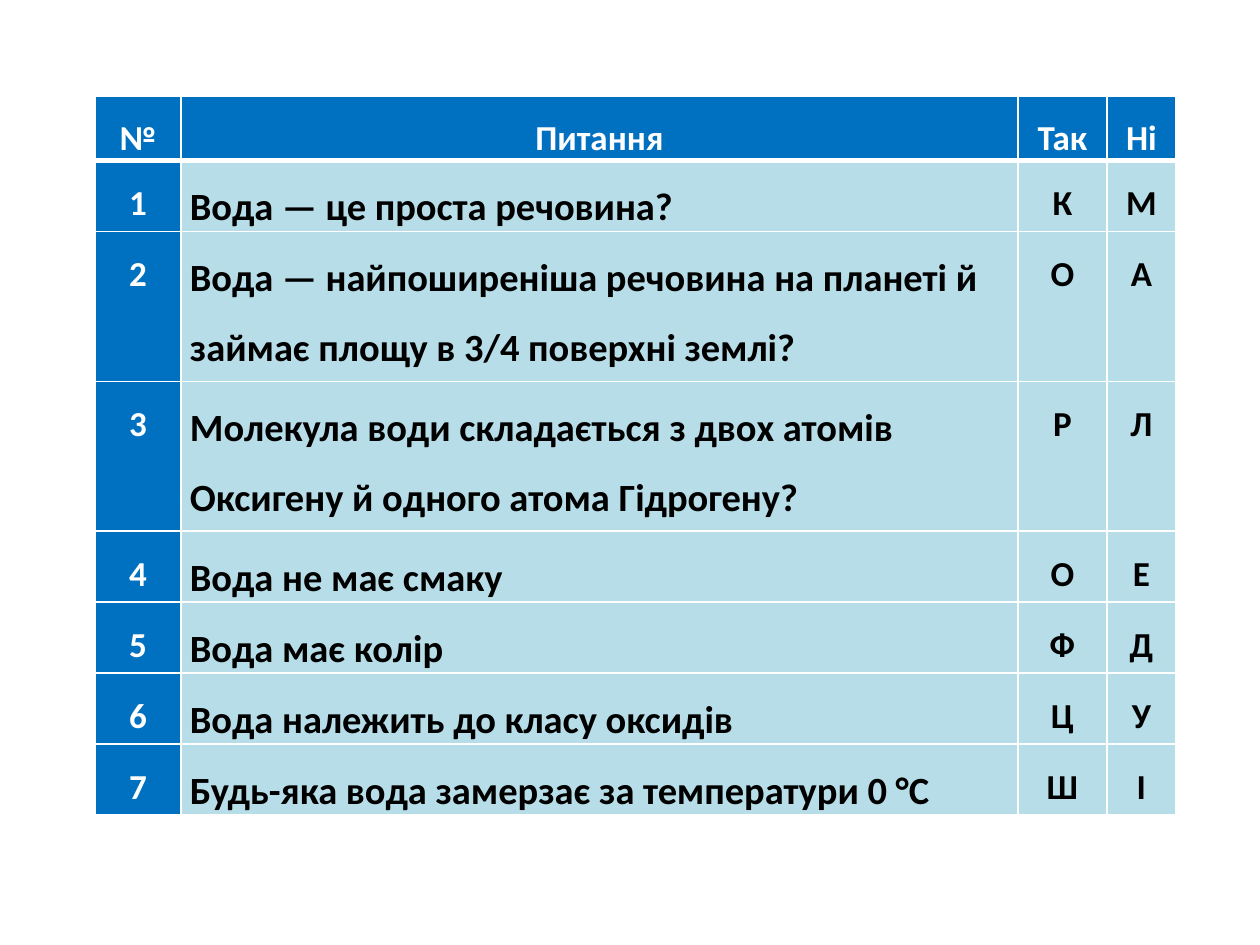
from typing import NamedTuple

from lxml import etree
from pptx import Presentation
from pptx.dml.color import RGBColor
from pptx.enum.text import PP_ALIGN
from pptx.oxml.ns import qn
from pptx.util import Emu, Pt

LEFT, CENTER = PP_ALIGN.LEFT, PP_ALIGN.CENTER
PX = 914400 / 126
FONT = "Calibri"
WHITE, BLACK, BLUE, PALE = "FFFFFF", "000000", "0070C0", "B7DEE8"

BLANK_LAYOUT = 6
TABLE_LEFT, TABLE_TOP = 95, 96
COLUMN_WIDTHS = (86, 837, 89, 69)
HEADER_HEIGHT, LINE_HEIGHT, TWO_LINE_HEIGHT = 60, 71, 150
CELL_INSET = 9
THIN, THICK = 1, 3


class Question(NamedTuple):
    text: str
    yes: str
    no: str
    height: int = LINE_HEIGHT


HEADER = ("№", "Питання", "Так", "Ні")
QUESTIONS = (
    Question("Вода — це проста речовина?", "К", "М"),
    Question("Вода — найпоширеніша речовина на планеті й займає площу в 3/4 поверхні землі?",
             "О", "А", TWO_LINE_HEIGHT),
    Question("Молекула води складається з двох атомів Оксигену й одного атома Гідрогену?",
             "Р", "Л", TWO_LINE_HEIGHT),
    Question("Вода не має смаку", "О", "Е"),
    Question("Вода має колір", "Ф", "Д"),
    Question("Вода належить до класу оксидів", "Ц", "У"),
    Question("Будь-яка вода замерзає за температури 0 °С", "Ш", "І"),
)


def px(n: int) -> Emu:
    return Emu(round(n * PX))


def rgb(value: str) -> RGBColor:
    return RGBColor.from_string(value)


def write(tf, text: str, *, size: int = 20, color: str = BLACK, align=CENTER) -> None:
    p = tf.paragraphs[0]
    p.alignment = align
    p.line_spacing = 1.5
    r = p.add_run()
    r.text = text
    r.font.name = FONT
    r.font.size = Pt(size)
    r.font.bold = True
    r.font.color.rgb = rgb(color)


def set_borders(cell, top: int, bottom: int) -> None:
    """Draw white borders; widths are in points and the sides stay thin."""
    tc_pr = cell._tc.get_or_add_tcPr()
    sides = (("L", THIN), ("R", THIN), ("T", top), ("B", bottom))
    for i, (side, width) in enumerate(sides):
        ln = etree.Element(qn(f"a:ln{side}"), w=str(Pt(width)))
        fill = etree.SubElement(ln, qn("a:solidFill"))
        etree.SubElement(fill, qn("a:srgbClr"), val=WHITE)
        tc_pr.insert(i, ln)


def fill_cell(cell, text: str, row: int, col: int) -> None:
    is_blue = row == 0 or col == 0
    is_question = row > 0 and col == 1
    cell.margin_left = cell.margin_right = px(CELL_INSET)
    cell.margin_top = cell.margin_bottom = 0
    cell.fill.solid()
    cell.fill.fore_color.rgb = rgb(BLUE if is_blue else PALE)
    set_borders(cell, top=THICK if row == 1 else THIN, bottom=THICK if row == 0 else THIN)
    write(cell.text_frame, text, size=22 if is_question else 20,
          color=WHITE if is_blue else BLACK, align=LEFT if is_question else CENTER)


def add_question_table(s) -> None:
    rows = [HEADER] + [(str(n), q.text, q.yes, q.no) for n, q in enumerate(QUESTIONS, 1)]
    heights = [HEADER_HEIGHT] + [q.height for q in QUESTIONS]
    table = s.shapes.add_table(
        len(rows), len(COLUMN_WIDTHS), px(TABLE_LEFT), px(TABLE_TOP),
        px(sum(COLUMN_WIDTHS)), px(sum(heights))).table
    for column, width in zip(table.columns, COLUMN_WIDTHS):
        column.width = px(width)
    for i, (texts, height) in enumerate(zip(rows, heights)):
        table.rows[i].height = px(height)
        for j, text in enumerate(texts):
            fill_cell(table.cell(i, j), text, i, j)


def main() -> None:
    prs = Presentation()
    prs.slide_width, prs.slide_height = px(1260), px(945)
    s = prs.slides.add_slide(prs.slide_layouts[BLANK_LAYOUT])
    add_question_table(s)
    prs.save("out.pptx")


if __name__ == "__main__":
    main()
